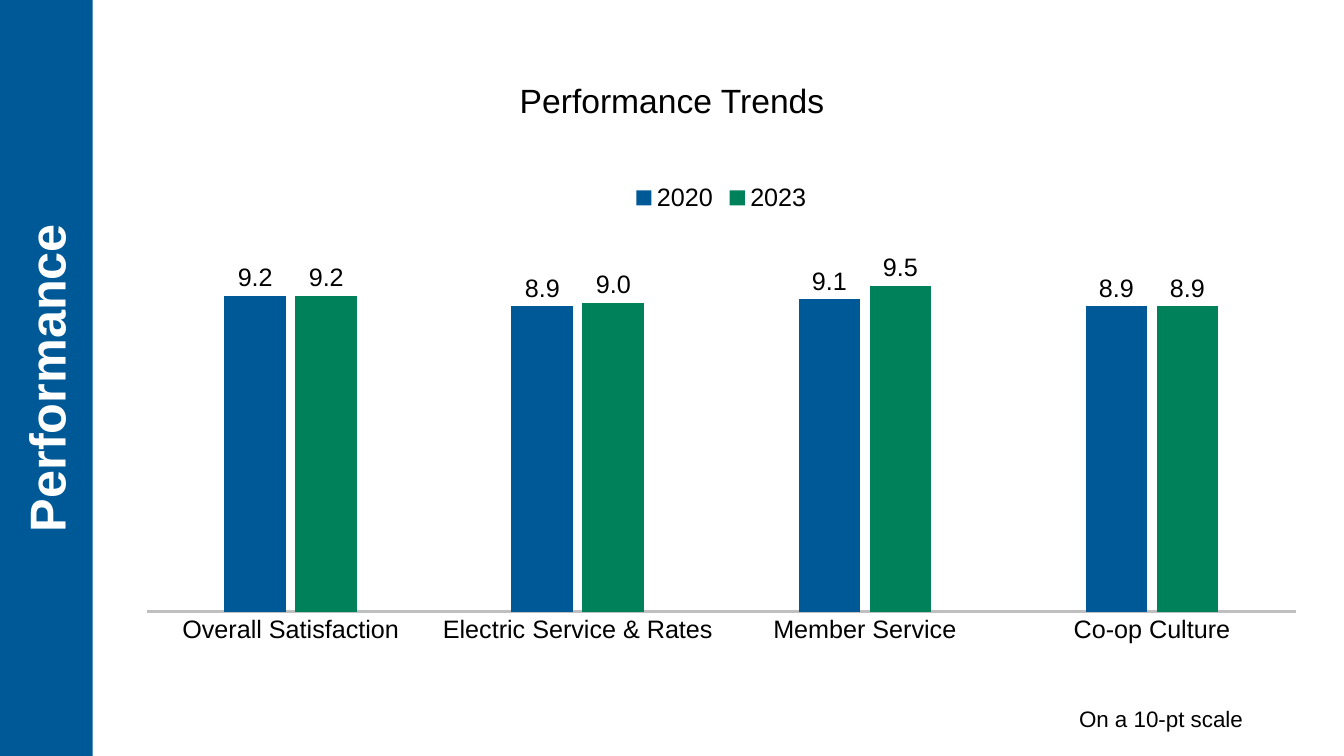
import pptx
import pptx.chart.data
import pptx.dml.color
import pptx.enum.chart
import pptx.enum.shapes
import pptx.enum.text
import pptx.oxml
import pptx.oxml.ns
import pptx.util

Inches, Pt = pptx.util.Inches, pptx.util.Pt
enum = pptx.enum.chart
BLUE, GREEN, GREY, BLACK, WHITE = "005997", "00815A", "BFBFBF", "000000", "FFFFFF"


def paint(target, shade):
    """Give a fill a solid colour."""
    target.solid()
    target.fore_color.rgb = pptx.dml.color.RGBColor.from_string(shade)


def write(shape, words, size, shade, bold=False):
    """Put one centred line of Arial into a shape."""
    para = shape.text_frame.paragraphs[0]
    para.text = words
    para.alignment = pptx.enum.text.PP_ALIGN.CENTER
    para.font.name, para.font.size, para.font.bold = "Arial", Pt(size), bold
    paint(para.font.fill, shade)


deck = pptx.Presentation()
deck.slide_width, deck.slide_height = Inches(13.33), Inches(7.5)
wide, high = deck.slide_width, deck.slide_height
slide = deck.slides.add_slide(deck.slide_layouts[6])

# Title and scale note
for words, size, left, top, width, height in [
    ("Performance Trends", 24, 2.08, 0.74, 9.17, 0.5),
    ("On a 10-pt scale", 16, 10.17, 6.95, 2.69, 0.37),
]:
    box = slide.shapes.add_textbox(Inches(left), Inches(top), Inches(width), Inches(height))
    box.text_frame.word_wrap = True
    write(box, words, size, BLACK)

# Column chart
data = pptx.chart.data.CategoryChartData(number_format="0.0")
data.categories = ["Overall Satisfaction", "Electric Service & Rates",
                   "Member Service", "Co-op Culture"]
data.add_series("2020", [9.2, 8.9, 9.1, 8.9])
data.add_series("2023", [9.2, 9.0, 9.5, 8.9])
chart = slide.shapes.add_chart(
    enum.XL_CHART_TYPE.COLUMN_CLUSTERED,
    Inches(1.45), Inches(1.7), Inches(11.41), Inches(4.8), data).chart
chart.has_title = False
chart.font.name, chart.font.size = "Arial", Pt(18)
paint(chart.font.fill, BLACK)
chart.has_legend = True
chart.legend.position = enum.XL_LEGEND_POSITION.TOP
chart.legend.include_in_layout = False

plot = chart.plots[0]
plot.gap_width, plot.overlap, plot.vary_by_categories = 250, -15, False
for series, shade in zip(plot.series, [BLUE, GREEN]):
    paint(series.format.fill, shade)
    labels = series.data_labels
    labels.show_value = True
    labels.position = enum.XL_LABEL_POSITION.OUTSIDE_END
    labels.number_format, labels.number_format_is_linked = "0.0", False

scale = chart.value_axis
scale.minimum_scale, scale.maximum_scale, scale.major_unit = 0, 11, 0.2
scale.has_major_gridlines = scale.visible = False
base = chart.category_axis
base.major_tick_mark = enum.XL_TICK_MARK.NONE
base.format.line.width = Pt(1.5)
paint(base.format.line.fill, GREY)

# Fixed inner plot area, as shares of the chart
area = chart.element.find(".//" + pptx.oxml.ns.qn("c:plotArea"))
for old in area.findall(pptx.oxml.ns.qn("c:layout")):
    area.remove(old)
parts = [("layoutTarget", "inner"), ("xMode", "edge"), ("yMode", "edge"),
         ("x", 0), ("y", 0.13), ("w", 1), ("h", 0.78)]
inner = "".join(f'<c:{tag} val="{val}"/>' for tag, val in parts)
area.insert(0, pptx.oxml.parse_xml(
    f'<c:layout {pptx.oxml.ns.nsdecls("c")}><c:manualLayout>{inner}</c:manualLayout></c:layout>'))

# Side band: as long as the slide is high, turned upright on the left edge
thick = Inches(0.92)
band = slide.shapes.add_shape(
    pptx.enum.shapes.MSO_SHAPE.RECTANGLE,
    (thick - high) // 2, (high - thick) // 2, high, thick)
band.rotation = 270
band.shadow.inherit = False
paint(band.fill, BLUE)
band.line.fill.background()
frame = band.text_frame
frame.vertical_anchor = pptx.enum.text.MSO_ANCHOR.MIDDLE
frame.margin_top, frame.margin_bottom = 0, Inches(0.02)
write(band, "Performance", 36, WHITE, bold=True)

deck.save("out.pptx")
